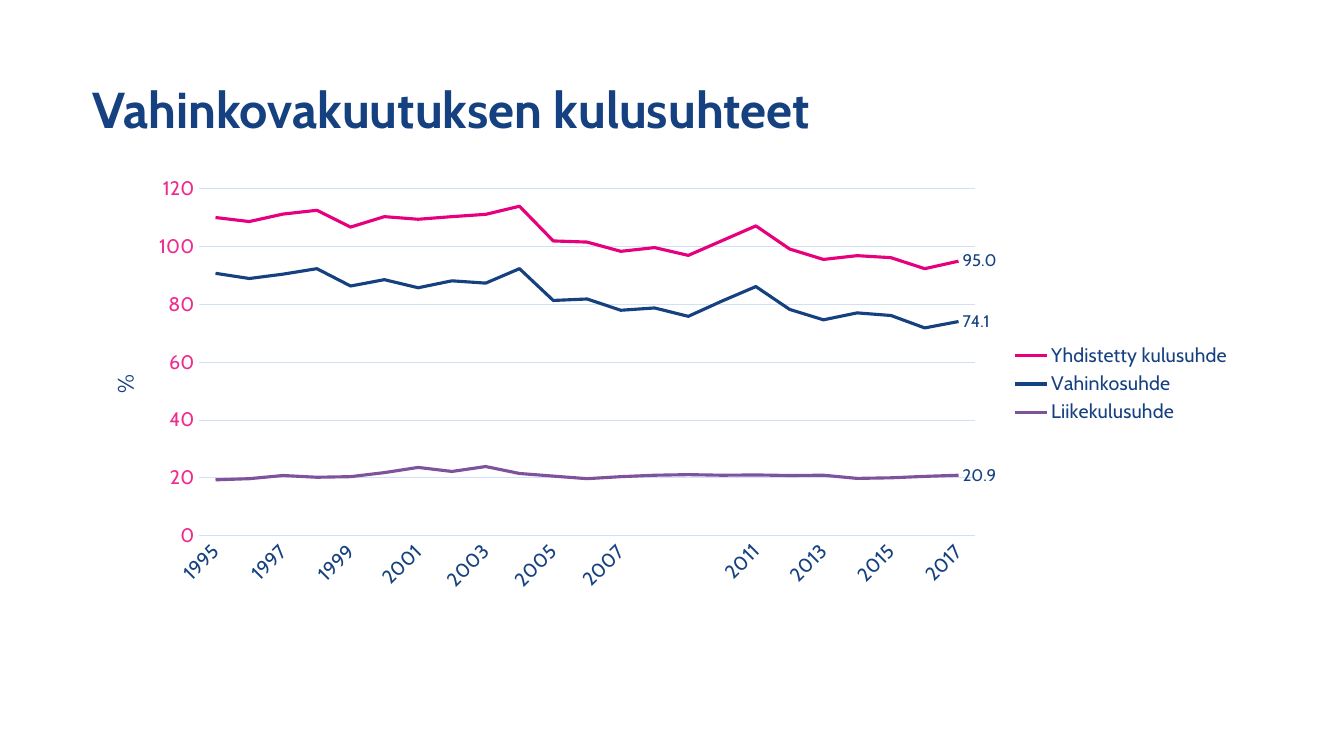
from lxml import etree
from pptx import Presentation
from pptx.chart.data import CategoryChartData
from pptx.dml.color import RGBColor
from pptx.enum import chart as ch, text as tx
from pptx.oxml import parse_xml
from pptx.oxml.ns import qn, nsdecls
from pptx.util import Inches, Pt

NAVY = RGBColor(0x16, 0x41, 0x80)
PINK = RGBColor(0xE6, 0x00, 0x7E)
ROSE = RGBColor(0xEE, 0x2C, 0x90)
PLUM = RGBColor(0x7F, 0x53, 0x9C)
PALE = RGBColor(0xD1, 0xE0, 0xF7)
FACE = "Cabin"

TITLE = "Vahinkovakuutuksen kulusuhteet"
YEARS = [str(year) for year in range(1995, 2018)]
RATIOS = [
    ("Yhdistetty kulusuhde", PINK,
     [110.1, 108.7, 111.3, 112.6, 106.8, 110.4, 109.5, 110.4, 111.2, 114, 102, 101.6,
      98.4, 99.7, 97, 102.1, 107.2, 99.2, 95.6, 96.9, 96.2, 92.4, 95]),
    ("Vahinkosuhde", NAVY,
     [90.8, 89, 90.5, 92.4, 86.4, 88.6, 85.8, 88.2, 87.4, 92.4, 81.4, 81.9,
      78, 78.8, 75.9, 81.2, 86.2, 78.3, 74.7, 77.1, 76.2, 71.9, 74.1]),
    ("Liikekulusuhde", PLUM,
     [19.3, 19.7, 20.8, 20.2, 20.4, 21.8, 23.6, 22.2, 23.9, 21.5, 20.6, 19.7,
      20.4, 20.9, 21.1, 20.9, 21, 20.8, 20.9, 19.8, 20, 20.5, 20.9]),
]
LEFT, WIDE = 0.82, 11.5
PLOT = {"x": 0.1, "y": 0.05, "w": 0.67, "h": 0.8}
UNIT = {"x": 0.02, "y": 0.47}


def style(font, size=14, color=NAVY, bold=False):
    font.name = FACE
    font.size = Pt(size)
    font.bold = bold
    font.color.rgb = color


def write(frame, words, spacing=None, **look):
    para = frame.paragraphs[0]
    para.line_spacing = spacing
    run = para.add_run()
    run.text = words
    style(run.font, **look)


def place(parent, spots, inner=False):
    for old in parent.findall(qn("c:layout")):
        parent.remove(old)
    layout = parse_xml(f"<c:layout {nsdecls('c')}><c:manualLayout/></c:layout>")
    box = layout[0]
    marks = [("layoutTarget", "inner")] if inner else []
    marks += [("xMode", "edge"), ("yMode", "edge"), *spots.items()]
    for tag, val in marks:
        etree.SubElement(box, qn("c:" + tag)).set("val", str(val))
    text = parent.find(qn("c:tx"))
    if text is None:
        parent.insert(0, layout)
    else:
        text.addnext(layout)


def draw(line, color, width):
    line.color.rgb = color
    line.width = Pt(width)


deck = Presentation()
deck.slide_width, deck.slide_height = Inches(13.33), Inches(7.5)
slide = deck.slides.add_slide(deck.slide_layouts[6])

head = slide.shapes.add_textbox(Inches(LEFT), Inches(0.39), Inches(WIDE), Inches(1.45)).text_frame
head.word_wrap = True
head.vertical_anchor = tx.MSO_ANCHOR.MIDDLE
write(head, TITLE, spacing=0.9, size=36, bold=True)

data = CategoryChartData(number_format="0.0")
data.categories = YEARS
for name, color, vals in RATIOS:
    data.add_series(name, vals)
chart = slide.shapes.add_chart(
    ch.XL_CHART_TYPE.LINE, Inches(LEFT), Inches(1.66), Inches(WIDE), Inches(4.3), data).chart
style(chart.font)
chart.has_title = False
chart.has_legend = True
chart.legend.position = ch.XL_LEGEND_POSITION.RIGHT
chart.legend.include_in_layout = False
style(chart.legend.font)
place(chart.plots[0]._element.getparent(), PLOT, inner=True)
chart.plots[0].vary_by_categories = False

years, scale = chart.category_axis, chart.value_axis
for axis, color in ((years, NAVY), (scale, ROSE)):
    axis.major_tick_mark = axis.minor_tick_mark = ch.XL_TICK_MARK.NONE
    style(axis.tick_labels.font, color=color)
draw(years.format.line, PALE, 0.75)
years._element.find(qn("c:txPr")).find(qn("a:bodyPr")).set("rot", "-2700000")

scale.minimum_scale, scale.maximum_scale, scale.major_unit = 0, 120, 20
scale.tick_labels.number_format = "0"
scale.tick_labels.number_format_is_linked = False
scale.format.line.fill.background()
scale.has_major_gridlines = True
draw(scale.major_gridlines.format.line, PALE, 0.75)
unit = scale.axis_title
write(unit.text_frame, "%", size=16)
unit.text_frame._txBody.find(qn("a:bodyPr")).set("rot", "-5400000")
place(unit._element, UNIT)

for series, (name, color, vals) in zip(chart.plots[0].series, RATIOS):
    series.smooth = False
    series.marker.style = ch.XL_MARKER_STYLE.NONE
    draw(series.format.line, color, 2.25)
    last = len(vals) - 1
    label = series.points[last].data_label
    style(label.font, size=12)
    label.position = ch.XL_LABEL_POSITION.RIGHT
    mark = series._element.find(qn("c:dLbls")).find(qn("c:dLbl"))
    form = parse_xml(f'<c:numFmt {nsdecls("c")} formatCode="0.0" sourceLinked="0"/>')
    mark.find(qn("c:idx")).addnext(form)
    series._element.find(qn("c:dLbls")).find(qn("c:showVal")).set("val", "0")

deck.save("out.pptx")
